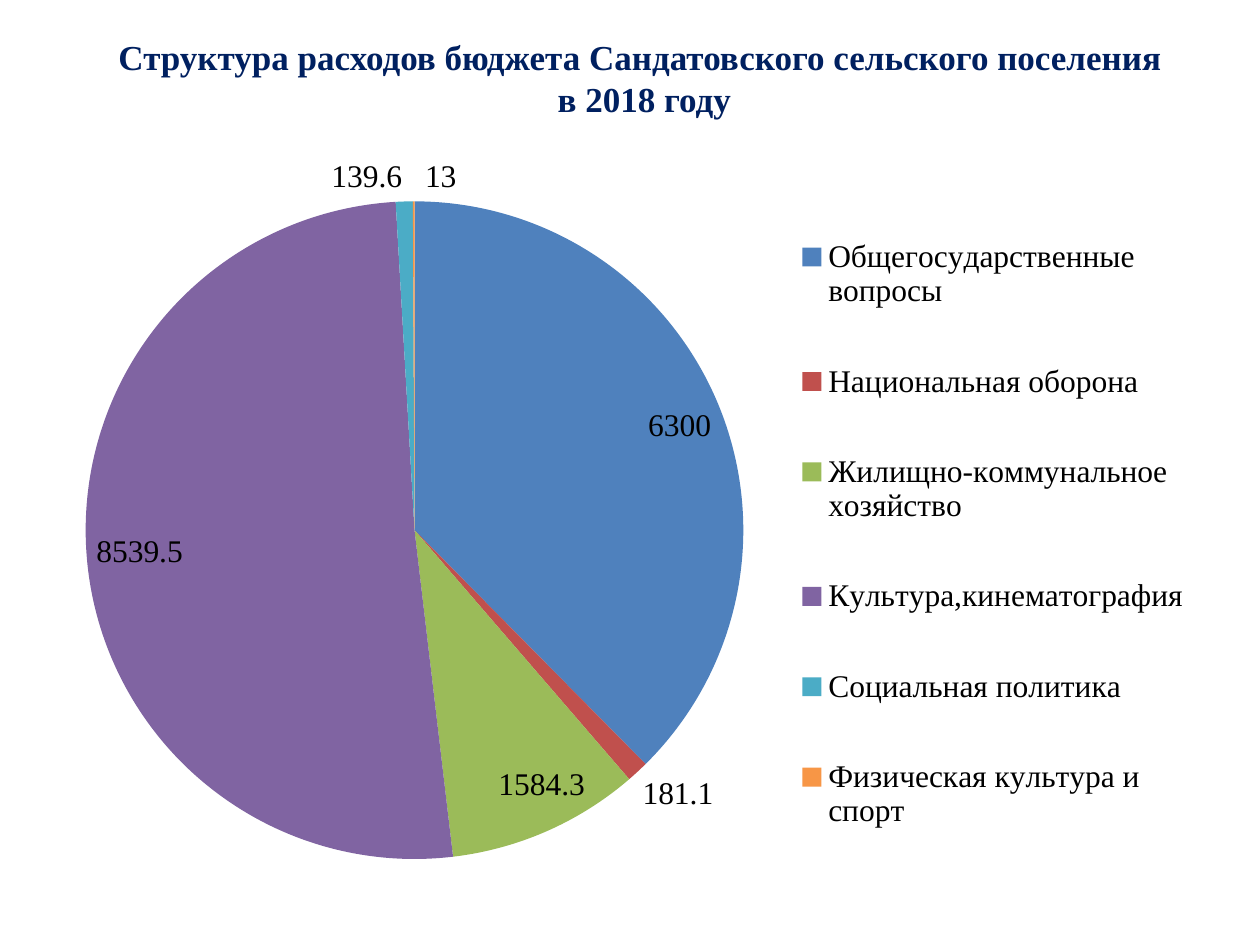
import pptx
import pptx.chart.data
import pptx.dml.color
import pptx.enum.chart
import pptx.enum.text
import pptx.oxml
import pptx.oxml.ns
import pptx.util
from dataclasses import dataclass

Pt = pptx.util.Pt
RGB = pptx.dml.color.RGBColor.from_string


@dataclass(frozen=True)
class Theme:
    face: str = "Times New Roman"
    navy: str = "002060"
    ink: str = "000000"
    head: int = 20
    body: int = 18


THEME = Theme()

TITLE = "Структура расходов бюджета Сандатовского сельского поселения\v в 2018 году"

COSTS = [
    ("Общегосударственные вопросы", 6300, "4F81BD"),
    ("Национальная оборона", 181.1, "C0504D"),
    ("Жилищно-коммунальное хозяйство", 1584.3, "9BBB59"),
    ("Культура,кинематография", 8539.5, "8064A2"),
    ("Социальная политика", 139.6, "4BACC6"),
    ("Физическая культура и спорт", 13, "F79646"),
]


def apply(item, form):
    for name, value in form.items():
        setattr(item, name, value)


def set_font(font, size, color, bold=False):
    apply(font, {"name": THEME.face, "size": Pt(size), "bold": bold})
    font.color.rgb = RGB(color)


def set_place(parent, x, y, w, h, inner=False):
    layout = parent.find(pptx.oxml.ns.qn("c:layout"))
    if layout is not None:
        parent.remove(layout)
    target = '<c:layoutTarget val="inner"/>' if inner else ""
    sizes = zip("xywh", (x, y, w, h))
    modes = '<c:xMode val="edge"/><c:yMode val="edge"/>'
    rows = "".join(f'<c:{key} val="{val}"/>' for key, val in sizes)
    layout = pptx.oxml.parse_xml(
        f'<c:layout {pptx.oxml.ns.nsdecls("c")}><c:manualLayout>'
        f"{target}{modes}{rows}</c:manualLayout></c:layout>"
    )
    parent.insert(0 if inner else 1, layout)


def add_title(slide):
    box = slide.shapes.add_textbox(Pt(28), Pt(16.5), Pt(675.5), Pt(56))
    frame = box.text_frame
    apply(frame, {
        "word_wrap": True,
        "vertical_anchor": pptx.enum.text.MSO_ANCHOR.MIDDLE,
    })
    para = frame.paragraphs[0]
    para.text = TITLE
    para.alignment = pptx.enum.text.PP_ALIGN.CENTER
    for run in para.runs:
        set_font(run.font, THEME.head, THEME.navy, True)


def add_pie(slide):
    names, values, colors = zip(*COSTS)
    data = pptx.chart.data.CategoryChartData()
    data.categories = names
    data.add_series("Series 1", values)
    chart = slide.shapes.add_chart(
        pptx.enum.chart.XL_CHART_TYPE.PIE,
        Pt(36), Pt(73.5), Pt(648), Pt(450), data,
    ).chart
    apply(chart, {"has_title": False, "has_legend": True})
    set_font(chart.font, THEME.body, THEME.ink)

    legend = chart.legend
    apply(legend, {
        "position": pptx.enum.chart.XL_LEGEND_POSITION.CORNER,
        "include_in_layout": False,
    })
    set_font(legend.font, THEME.body, THEME.ink)

    plot = chart.plots[0]
    apply(plot, {"vary_by_categories": True, "has_data_labels": True})
    labels = plot.data_labels
    apply(labels, {
        "show_value": True,
        "show_percentage": False,
        "number_format": "General",
        "number_format_is_linked": False,
        "position": pptx.enum.chart.XL_LABEL_POSITION.BEST_FIT,
    })
    set_font(labels.font, THEME.body, THEME.ink)
    for i, color in enumerate(colors):
        fill = plot.series[0].points[i].format.fill
        fill.solid()
        fill.fore_color.rgb = RGB(color)

    area = chart.element.find(".//" + pptx.oxml.ns.qn("c:plotArea"))
    set_place(area, 0.02, 0.09, 0.58, 0.84, inner=True)
    key = chart.element.find(".//" + pptx.oxml.ns.qn("c:legend"))
    set_place(key, 0.64, 0.07, 0.36, 0.89)


def main():
    deck = pptx.Presentation()
    apply(deck, {"slide_width": Pt(720), "slide_height": Pt(540)})
    slide = deck.slides.add_slide(deck.slide_layouts[6])
    add_title(slide)
    add_pie(slide)
    deck.save("out.pptx")


if __name__ == "__main__":
    main()
